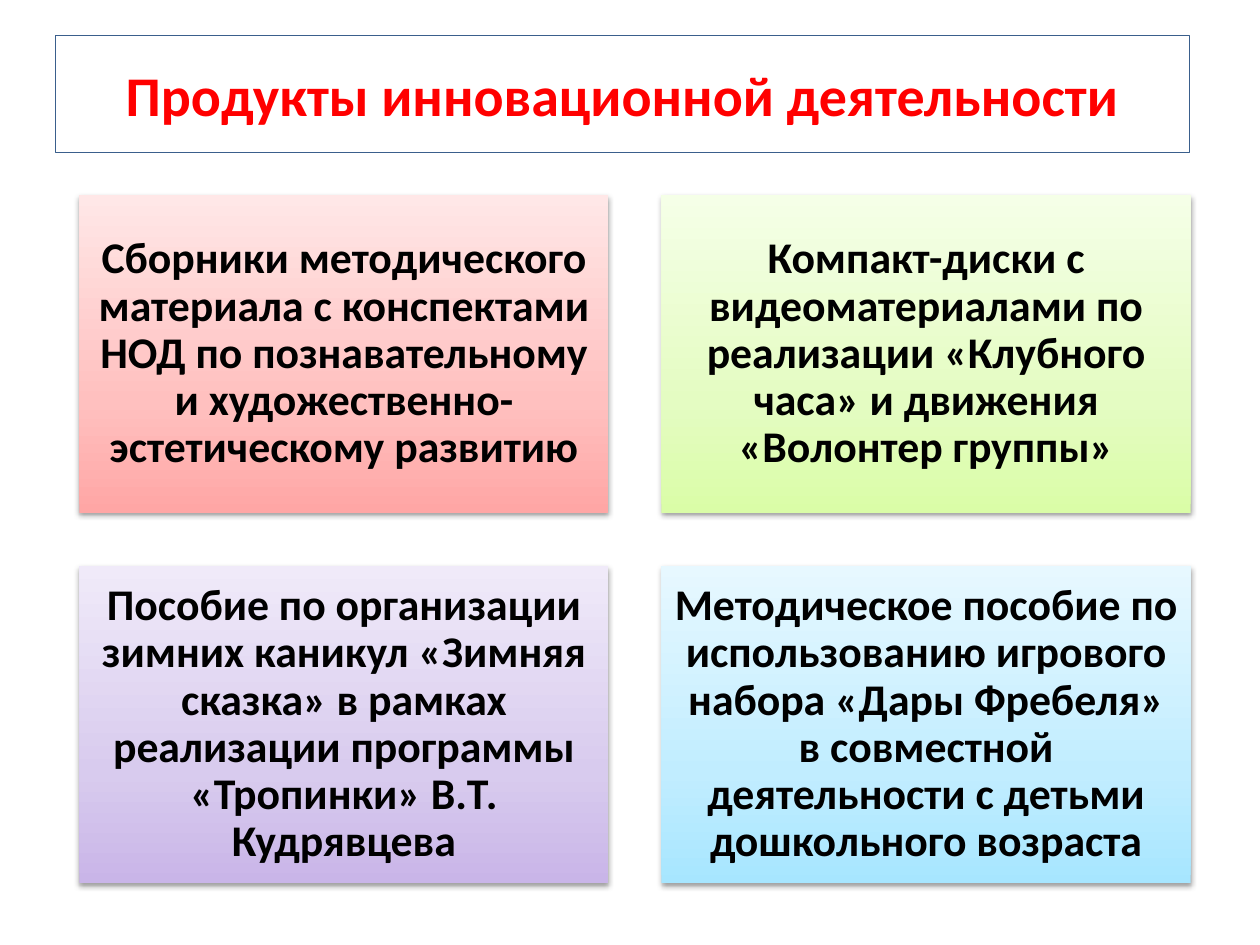
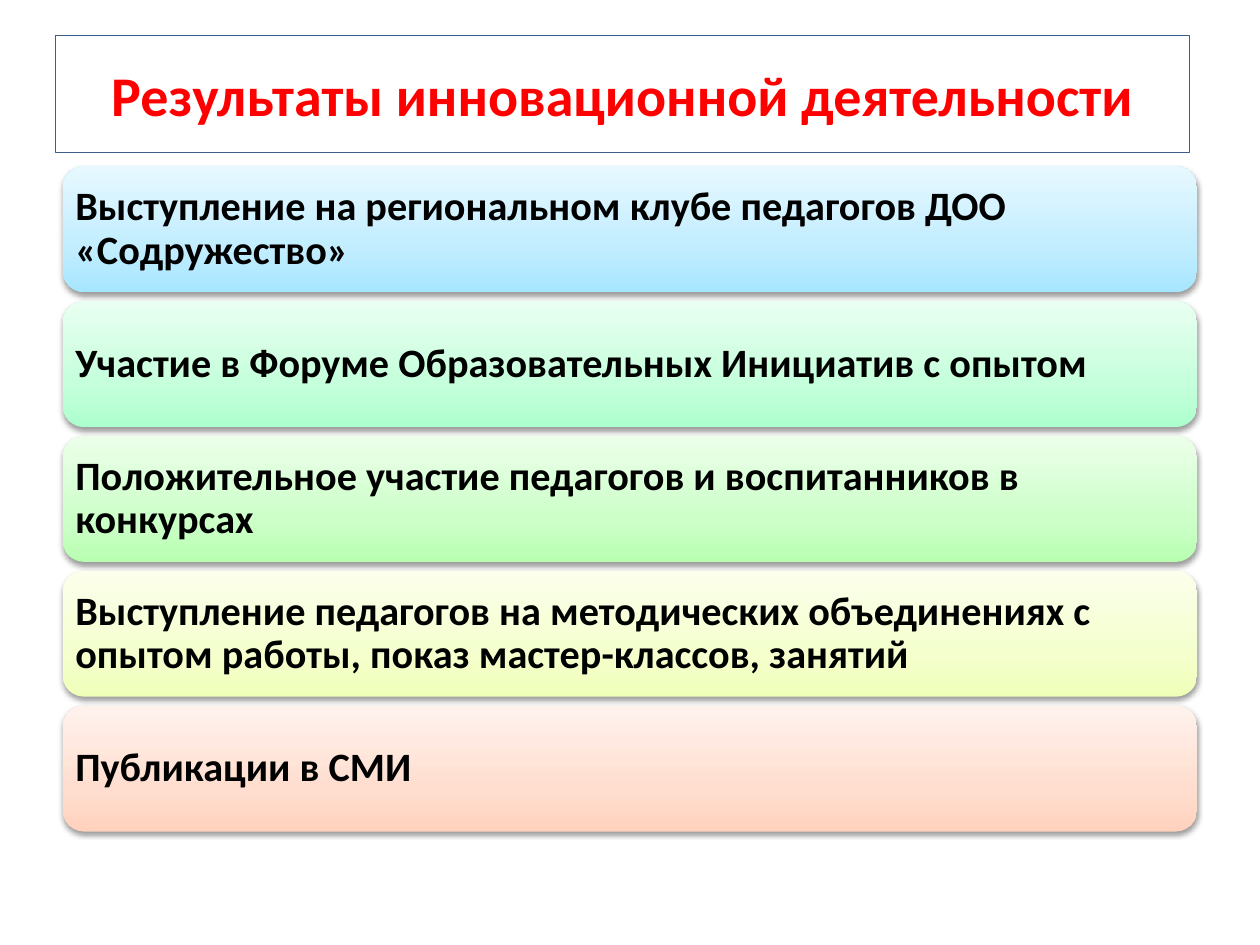
"""Build two slides on the products and results of innovative work."""
import copy
from dataclasses import dataclass

import lxml.etree
import pptx
import pptx.dml.color
import pptx.enum.shapes
import pptx.enum.text
import pptx.oxml.ns
import pptx.util

Inches = pptx.util.Inches
Pt = pptx.util.Pt
SHAPE = pptx.enum.shapes.MSO_SHAPE
ALIGN = pptx.enum.text.PP_ALIGN
qn = pptx.oxml.ns.qn


@dataclass(frozen=True)
class Theme:
    font: str = "Calibri"
    title: str = "FF0000"
    frame: str = "3A5F8C"
    paper: str = "FFFFFF"
    ink: str = "000000"
    head: int = 32
    card: int = 25
    row: int = 23
    rose: tuple = ("FFA6A5", "FFC0BF", "FFE7E7")
    lime: tuple = ("DAFDA7", "E4FCC2", "F5FFE7")
    lilac: tuple = ("C9B5E8", "D8CBEE", "F0EAF9")
    sky: tuple = ("A7E6FF", "C1EDFF", "E7F8FF")
    mint: tuple = ("ADFFCD", "C5FFDB", "E9FFF1")
    green: tuple = ("B9FFB2", "CDFFC9", "ECFFEA")
    lemon: tuple = ("F0FFB8", "F4FFCD", "FBFFEC")
    peach: tuple = ("FFD2BD", "FFDED0", "FFF2ED")


THEME = Theme()

CARDS = [
    ("Сборники методического материала с конспектами НОД по познавательному "
     "и художественно-эстетическому развитию", THEME.rose),
    ("Компакт-диски с видеоматериалами по реализации «Клубного часа» "
     "и движения «Волонтер группы»", THEME.lime),
    ("Пособие по организации зимних каникул «Зимняя сказка» в рамках "
     "реализации программы «Тропинки» В.Т. Кудрявцева", THEME.lilac),
    ("Методическое пособие по использованию игрового набора «Дары Фребеля» "
     "в совместной деятельности с детьми дошкольного возраста", THEME.sky),
]

ROWS = [
    ("Выступление на региональном клубе педагогов ДОО «Содружество»", THEME.sky),
    ("Участие в Форуме Образовательных Инициатив с опытом", THEME.mint),
    ("Положительное участие педагогов и воспитанников в конкурсах", THEME.green),
    ("Выступление педагогов на методических объединениях с опытом работы, "
     "показ мастер-классов, занятий", THEME.lemon),
    ("Публикации в СМИ", THEME.peach),
]


def rgb(code):
    return pptx.dml.color.RGBColor.from_string(code)


def add_box(slide, kind, place, text, size, color, align, inset):
    box = slide.shapes.add_shape(kind, *map(Inches, place))
    box.shadow.inherit = False
    frame = box.text_frame
    frame.text = text
    frame.word_wrap = True
    frame.vertical_anchor = pptx.enum.text.MSO_ANCHOR.MIDDLE
    frame.margin_left = frame.margin_right = Inches(inset)
    frame.margin_top = frame.margin_bottom = Inches(inset)
    line = frame.paragraphs[0]
    line.alignment = align
    font = line.runs[0].font
    font.name, font.size, font.bold = THEME.font, Pt(size), True
    font.color.rgb = rgb(color)
    return box


def add_title(slide, text):
    box = add_box(slide, SHAPE.RECTANGLE, (0.44, 0.28, 9, 0.93), text,
                  THEME.head, THEME.title, ALIGN.CENTER, 0.1)
    box.fill.solid()
    box.fill.fore_color.rgb = rgb(THEME.paper)
    box.line.color.rgb = rgb(THEME.frame)
    box.line.width = Pt(0.75)


def fade(box, tones):
    box.fill.gradient()
    box.fill.gradient_angle = 90
    stops = box._element.spPr.find(".//" + qn("a:gsLst"))
    stops.append(copy.deepcopy(stops[-1]))
    for stop, tone, spot in zip(box.fill.gradient_stops, tones, (0, 0.35, 1)):
        stop.color.rgb = rgb(tone)
        stop.position = spot


def cast(box):
    effects = box._element.spPr.find(qn("a:effectLst"))
    shade = lxml.etree.SubElement(
        effects, qn("a:outerShdw"), blurRad=str(Pt(3.1)), dist=str(Pt(1.6)),
        dir="5400000", rotWithShape="0")
    tone = lxml.etree.SubElement(shade, qn("a:srgbClr"), val=THEME.ink)
    lxml.etree.SubElement(tone, qn("a:alpha"), val="38000")


def add_panel(slide, kind, place, text, tones, size, align, inset):
    box = add_box(slide, kind, place, text, size, THEME.ink, align, inset)
    box.text_frame.paragraphs[0].line_spacing = 0.9
    box.line.fill.background()
    fade(box, tones)
    cast(box)


def add_cards(slide):
    for i, (text, tones) in enumerate(CARDS):
        row, col = divmod(i, 2)
        place = (0.63 + 4.62 * col, 1.55 + 2.94 * row, 4.2, 2.52)
        add_panel(slide, SHAPE.RECTANGLE, place, text, tones,
                  THEME.card, ALIGN.CENTER, 0.1)


def add_rows(slide):
    for i, (text, tones) in enumerate(ROWS):
        place = (0.5, 1.32 + 1.07 * i, 9, 1)
        add_panel(slide, SHAPE.ROUNDED_RECTANGLE, place, text, tones,
                  THEME.row, ALIGN.LEFT, 0.05)


def main():
    deck = pptx.Presentation()
    deck.slide_width, deck.slide_height = Inches(10), Inches(7.5)
    for title, fill_in in (
        ("Продукты инновационной деятельности", add_cards),
        ("Результаты инновационной деятельности", add_rows),
    ):
        slide = deck.slides.add_slide(deck.slide_layouts[6])
        add_title(slide, title)
        fill_in(slide)
    deck.save("out.pptx")


if __name__ == "__main__":
    main()
